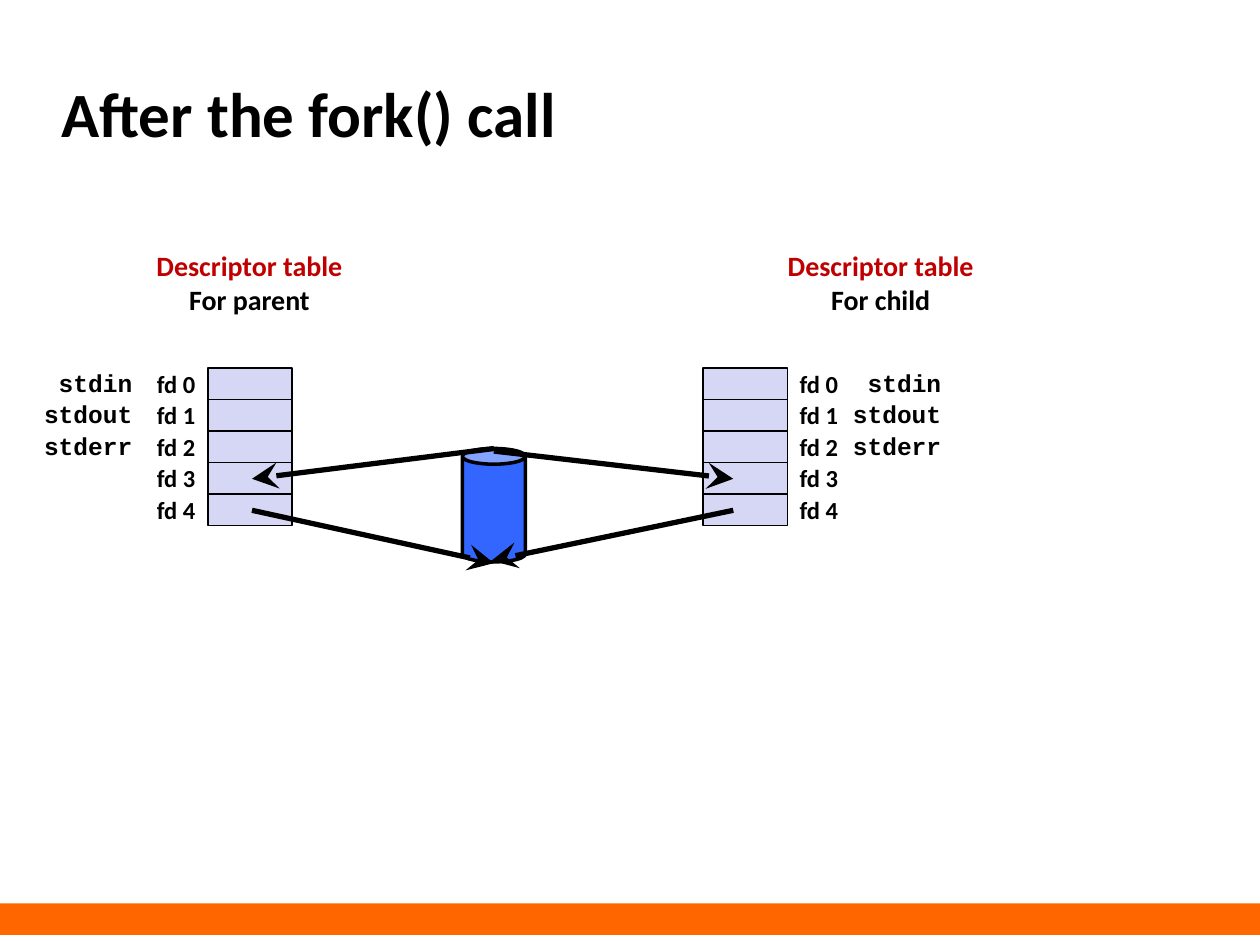
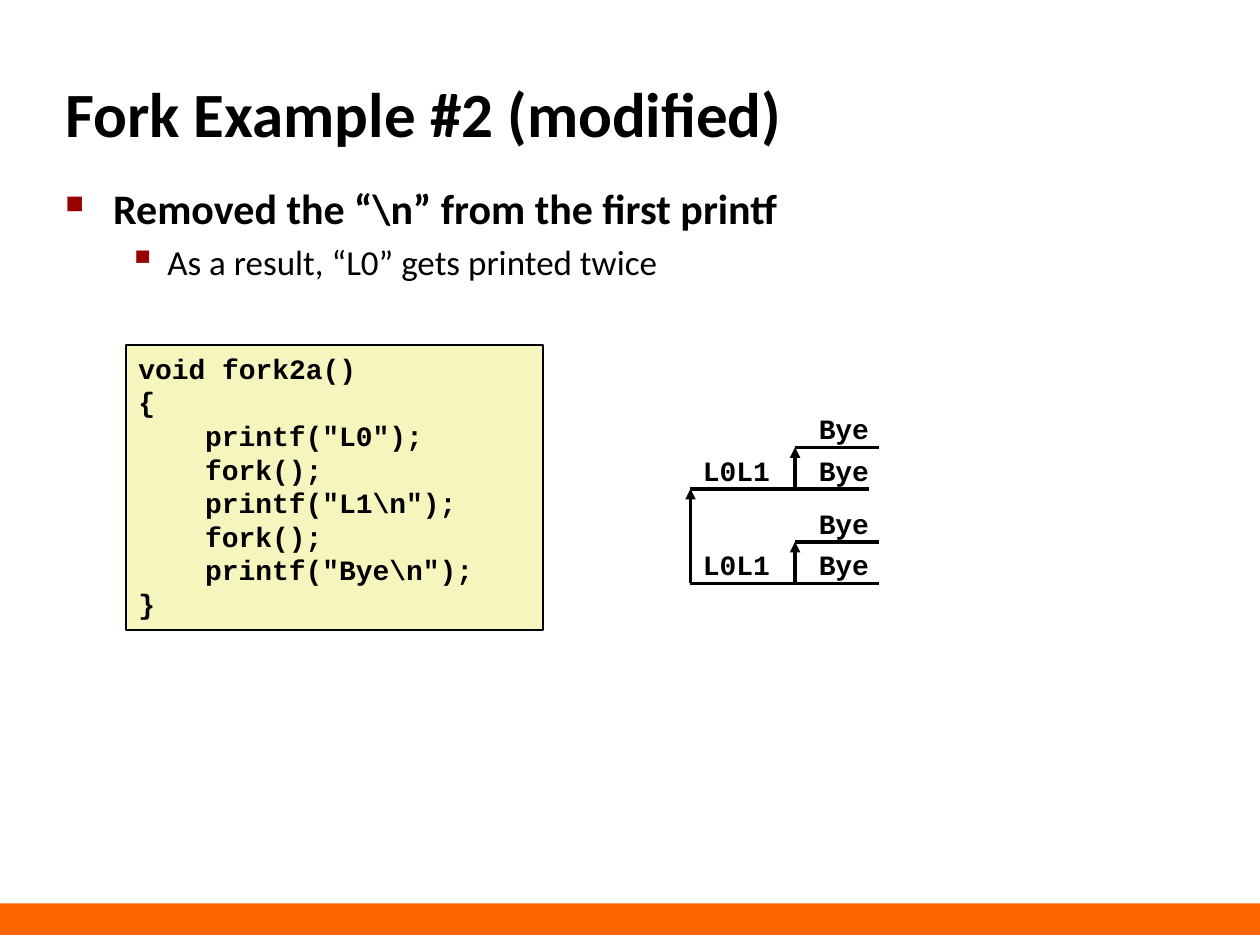
from dataclasses import dataclass

from lxml.etree import SubElement
from pptx import Presentation
from pptx.dml.color import RGBColor
from pptx.enum.shapes import MSO_CONNECTOR, MSO_SHAPE
from pptx.enum.text import MSO_ANCHOR as Anchor, PP_ALIGN as Align
from pptx.oxml.ns import qn
from pptx.util import Inches, Pt


@dataclass(frozen=True)
class Theme:
    sans: str = "Calibri"
    mono: str = "Courier New"
    ink: str = "000000"
    band: str = "FF6600"
    cell: str = "D6D6F5"
    heading: str = "C00000"
    pipe: str = "3366FF"
    code: str = "F6F5BD"
    bullet: str = "990000"
    title_size: int = 36
    point_size: int = 24
    subpoint_size: int = 20
    body_size: int = 16
    label_size: int = 14


THEME = Theme()
ROW_TOP, ROW_HEIGHT, ROW_COUNT = 2.92, 0.25, 5
CELL_WIDTH = 0.67
STREAMS = ["stdin", "stdout", "stderr"]
CODE = r"""void fork2a()
{
    printf("L0");
    fork();
    printf("L1\n");
    fork();
    printf("Bye\n");
}"""
CODE_INDENT = 0.53
BRANCH_RISE = 0.33


def rgb(color):
    return RGBColor.from_string(color)


def style(paragraph, size, font=THEME.sans, color=THEME.ink, bold=True, align=Align.LEFT):
    paragraph.alignment = align
    paragraph.font.name = font
    paragraph.font.size = Pt(size)
    paragraph.font.bold = bold
    paragraph.font.color.rgb = rgb(color)


def fill_paragraphs(frame, lines):
    """Write one paragraph per line and return the paragraphs."""
    frame.text = "\n".join(lines)
    return frame.paragraphs


def add_text(slide, box, lines, size, anchor=Anchor.MIDDLE, wrap=False, **look):
    frame = slide.shapes.add_textbox(*map(Inches, box)).text_frame
    frame.word_wrap = wrap
    frame.vertical_anchor = anchor
    paragraphs = fill_paragraphs(frame, lines)
    for paragraph in paragraphs:
        style(paragraph, size, **look)
    return paragraphs


def add_block(slide, kind, box, fill, line_width=None):
    block = slide.shapes.add_shape(kind, *map(Inches, box))
    block.shadow.inherit = False
    block.fill.solid()
    block.fill.fore_color.rgb = rgb(fill)
    if line_width:
        block.line.color.rgb = rgb(THEME.ink)
        block.line.width = Pt(line_width)
    else:
        block.line.fill.background()
    return block


def add_line(slide, start, end, width, arrow=None, arrow_size="med"):
    """Draw a straight line, with an arrowhead at its end if one is named."""
    line = slide.shapes.add_connector(MSO_CONNECTOR.STRAIGHT, *map(Inches, (*start, *end)))
    line.line.color.rgb = rgb(THEME.ink)
    line.line.width = Pt(width)
    properties = line._element.spPr
    if arrow:
        SubElement(properties.find(qn("a:ln")), qn("a:tailEnd"),
                   type=arrow, w=arrow_size, len=arrow_size)
    SubElement(properties, qn("a:effectLst"))


def add_bullet(paragraph, char, percent, margin, hanging):
    properties = paragraph._p.get_or_add_pPr()
    properties.set("marL", str(Inches(margin)))
    properties.set("indent", str(-Inches(hanging)))
    color = SubElement(properties, qn("a:buClr"))
    SubElement(color, qn("a:srgbClr"), val=THEME.bullet)
    SubElement(properties, qn("a:buSzPct"), val=str(percent * 1000))
    SubElement(properties, qn("a:buChar"), char=char)


def new_slide(deck, title, title_left):
    """Add a blank slide with the shared band and title."""
    slide = deck.slides.add_slide(deck.slide_layouts[6])
    add_block(slide, MSO_SHAPE.RECTANGLE, (0, 7.17, 10, 0.25), THEME.band)
    add_text(slide, (title_left, 0.48, 8.3, 0.83), [title], THEME.title_size, wrap=True)
    return slide


def add_descriptor_table(slide, owner, cell_left, label_left, stream_left, heading_left):
    heading, _ = add_text(slide, (heading_left, 1.92, 1.7, 0.64),
                          ["Descriptor table", f"For {owner}"],
                          THEME.body_size, align=Align.CENTER)
    heading.font.color.rgb = rgb(THEME.heading)
    for row in range(ROW_COUNT):
        top = ROW_TOP + row * ROW_HEIGHT
        add_block(slide, MSO_SHAPE.RECTANGLE,
                  (cell_left, top, CELL_WIDTH, ROW_HEIGHT), THEME.cell, 1)
        add_text(slide, (label_left, top, CELL_WIDTH, ROW_HEIGHT), [f"fd {row}"],
                 THEME.label_size, align=Align.RIGHT)
    for row, stream in enumerate(STREAMS):
        add_text(slide, (stream_left, ROW_TOP - 0.05 + row * ROW_HEIGHT, 0.9, 0.33), [stream],
                 THEME.label_size, font=THEME.mono, align=Align.RIGHT)


def add_code(slide, box, code):
    listing = add_block(slide, MSO_SHAPE.RECTANGLE, box, THEME.code, 1)
    frame = listing.text_frame
    frame.vertical_anchor = Anchor.TOP
    lines = code.splitlines()
    paragraphs = fill_paragraphs(frame, [line.strip() for line in lines])
    for line, paragraph in zip(lines, paragraphs):
        if line.startswith(" "):
            paragraph._p.get_or_add_pPr().set("marL", str(Inches(CODE_INDENT)))
        style(paragraph, THEME.body_size, font=THEME.mono)


def add_points(slide, box, point, subpoint):
    frame = slide.shapes.add_textbox(*map(Inches, box)).text_frame
    frame.word_wrap = True
    first, second = fill_paragraphs(frame, [point, subpoint])
    second.level = 1
    add_bullet(first, "■", 60, 0.38, 0.38)
    add_bullet(second, "▪", 110, 0.81, 0.31)
    style(first, THEME.point_size)
    style(second, THEME.subpoint_size, bold=False)
    first.space_before = Pt(0.2 * THEME.point_size)
    second.space_before = Pt(0.2 * THEME.subpoint_size)


def add_output(slide, text, left, line_y, width):
    """Set printed output just above a process line."""
    add_text(slide, (left, line_y - BRANCH_RISE, width, 0.37), [text], THEME.body_size,
             font=THEME.mono, anchor=Anchor.TOP)


def add_process(slide, y, end):
    """Draw a process from the first fork on, and the child of its second fork."""
    start, fork, child_end = 5.48, 6.31, 6.98
    child_y = y - BRANCH_RISE
    add_line(slide, (start, y), (fork, y), 2)
    add_line(slide, (fork, y), (end, y), 2)
    add_line(slide, (fork, y), (fork, child_y), 2, "triangle")
    add_line(slide, (fork, child_y), (child_end, child_y), 2)
    add_output(slide, "L0L1", start, y, 0.74)
    for line_y in (y, child_y):
        add_output(slide, "Bye", 6.4, line_y, 0.6)


def build_descriptors(deck):
    slide = new_slide(deck, "After the fork() call", 0.39)
    add_descriptor_table(slide, "parent", cell_left=1.65, label_left=0.98,
                         stream_left=0.25, heading_left=1.13)
    add_block(slide, MSO_SHAPE.CAN, (3.67, 3.56, 0.5, 0.9), THEME.pipe, 2)
    add_descriptor_table(slide, "child", cell_left=5.58, label_left=6.08,
                         stream_left=6.67, heading_left=6.14)
    read_y, write_y = 3.8, 4.05
    parent_x, child_x = 2, 5.82
    for start, end in [((3.92, 3.56), (parent_x, read_y)),
                       ((parent_x, write_y), (3.92, 4.47)),
                       ((3.92, 3.58), (child_x, read_y)),
                       ((child_x, write_y), (3.9, 4.45))]:
        add_line(slide, start, end, 3, "stealth", "lg")


def build_fork_example(deck):
    slide = new_slide(deck, "Fork Example #2 (modified)", 0.42)
    add_code(slide, (1, 2.74, 3.31, 2.26), CODE)
    add_points(slide, (0.42, 1.4, 8.64, 1.35),
               r"Removed the “\n” from the first printf",
               "As a result, “L0” gets printed twice")
    parent_y, child_y = 4.63, 3.88
    add_line(slide, (5.48, parent_y), (5.48, child_y), 2, "triangle")
    add_process(slide, parent_y, end=6.98)
    add_process(slide, child_y, end=6.9)


def main():
    deck = Presentation()
    deck.slide_width, deck.slide_height = Inches(10), Inches(7.5)
    build_descriptors(deck)
    build_fork_example(deck)
    deck.save("out.pptx")


if __name__ == "__main__":
    main()
